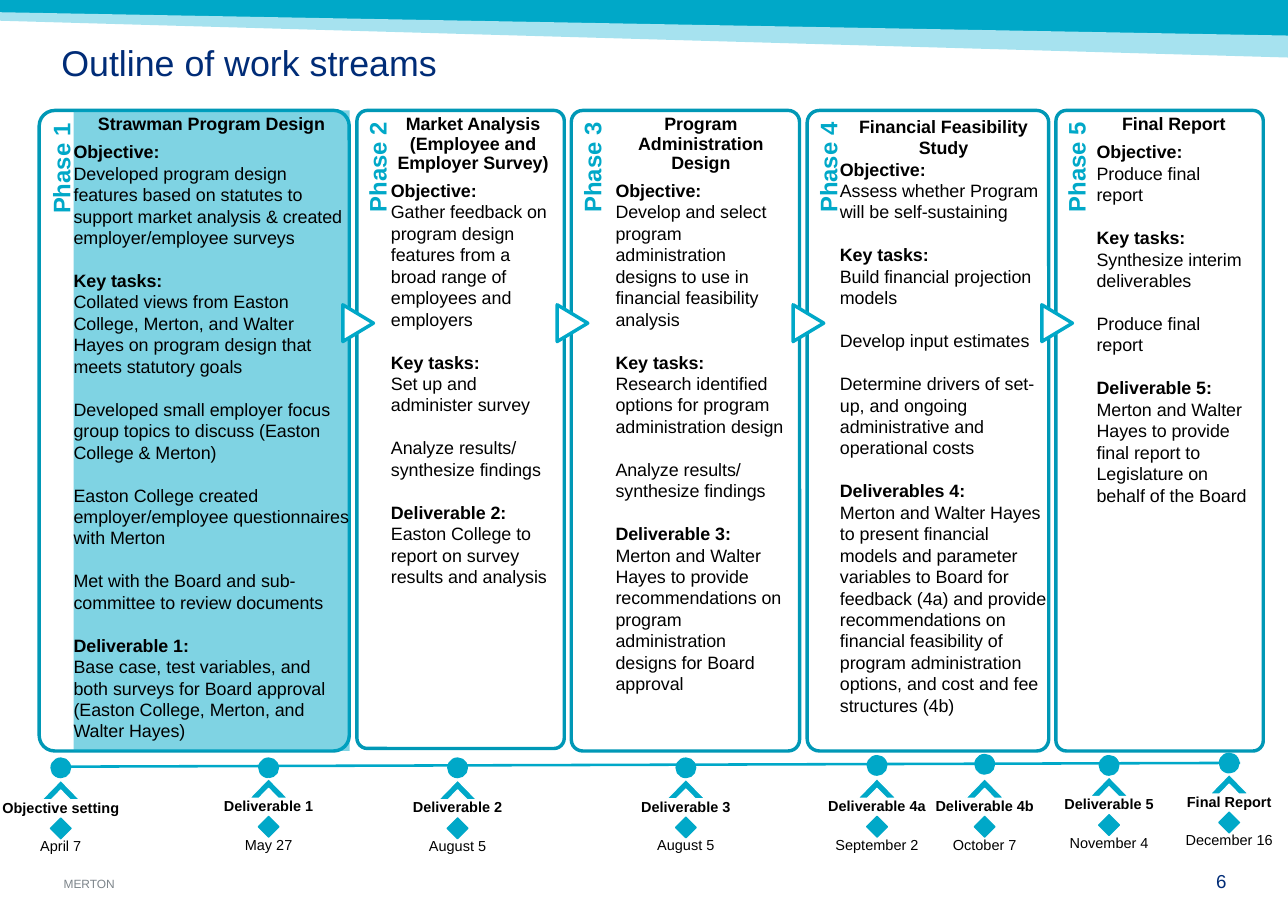
from dataclasses import dataclass

from lxml.etree import SubElement
from pptx import Presentation
from pptx.dml.color import RGBColor as RGB
from pptx.enum.shapes import MSO_CONNECTOR as LINE, MSO_SHAPE as SHAPE
from pptx.enum.text import MSO_ANCHOR as ANCHOR, PP_ALIGN as ALIGN
from pptx.oxml.ns import qn
from pptx.util import Pt

# ---- Content ----
TITLE = "Outline of work streams"
FOOTER, PAGE = "MERTON", "6"

# heading, panel left / width / height, body left / width, sections
PHASES = [
    ("Strawman Program Design", (23, 182, 376), (43.2, 162), [
        ("Objective:", ["Developed program design features based on statutes to support "
                        "market analysis & created employer/employee surveys"]),
        ("Key tasks:", ["Collated views from Easton College, Merton, and Walter Hayes on "
                        "program design that meets statutory goals",
                        "Developed small employer focus group topics to discuss "
                        "(Easton College & Merton)",
                        "Easton College created employer/employee questionnaires with Merton",
                        "Met with the Board and sub-committee to review documents"]),
        ("Deliverable 1:", ["Base case, test variables, and both surveys for Board approval "
                            "(Easton College, Merton, and Walter Hayes)"])]),
    ("Market Analysis (Employee and Employer Survey)", (209.5, 121.7, 374.5), (229.5, 96.5), [
        ("Objective:", ["Gather feedback on program design features from a broad range of "
                        "employees and employers"]),
        ("Key tasks:", ["Set up and administer survey",
                        "Analyze results/ synthesize findings"]),
        ("Deliverable 2:", ["Easton College to report on survey results and analysis"])]),
    ("Program Administration Design", (335.3, 134, 376), (361.3, 100.2), [
        ("Objective:", ["Develop and select program administration designs to use in "
                        "financial feasibility analysis"]),
        ("Key tasks:", ["Research identified options for program administration design",
                        "Analyze results/ synthesize findings"]),
        ("Deliverable 3:", ["Merton and Walter Hayes to provide recommendations on program "
                            "administration designs for Board approval"])]),
    ("Financial Feasibility Study", (473.8, 141.8, 376), (493, 121.7), [
        ("Objective:", ["Assess whether Program will be self-sustaining"]),
        ("Key tasks:", ["Build financial projection models",
                        "Develop input estimates",
                        "Determine drivers of set-up, and ongoing administrative and "
                        "operational costs"]),
        ("Deliverables 4:", ["Merton and Walter Hayes to present financial models and parameter "
                             "variables to Board for feedback (4a) and provide recommendations "
                             "on financial feasibility of program administration options, and "
                             "cost and fee structures (4b)"])]),
    ("Final Report", (619.8, 121.7, 376), (643.7, 90.7), [
        ("Objective:", ["Produce final report"]),
        ("Key tasks:", ["Synthesize interim deliverables", "Produce final report"]),
        ("Deliverable 5:", ["Merton and Walter Hayes to provide final report to Legislature "
                            "on behalf of the Board"])]),
]
LOOSE_HEADING = "Financial Feasibility Study"

# label, date, centre, dot middle, marker top
MILESTONES = [
    ("Objective setting", "April 7", 35.7, 450.7, 458),
    ("Deliverable 1", "May 27", 157.7, 450.7, 457),
    ("Deliverable 2", "August 5", 268.6, 450.7, 457.9),
    ("Deliverable 3", "August 5", 402.6, 450.7, 457.4),
    ("Deliverable 4a", "September 2", 514.8, 449.3, 457),
    ("Deliverable 4b", "October 7", 578, 448.6, 457),
    ("Deliverable 5", "November 4", 651, 449.3, 456),
    ("Final Report", "December 16", 721.5, 447.9, 454.5),
]
CHEVRON = [(-11.2, 11.5), (-5.6, 11.5), (0, 5.8), (5.6, 11.5), (11.2, 11.5), (0, 0)]


@dataclass(frozen=True)
class Theme:
    font: str = "Arial"
    teal: RGB = RGB(0x00, 0xA8, 0xC8)
    edge: RGB = RGB(0x00, 0x98, 0xB6)
    pale: RGB = RGB(0xA6, 0xE2, 0xEF)
    navy: RGB = RGB(0x00, 0x2C, 0x77)
    grey: RGB = RGB(0x7C, 0x84, 0x8A)
    black: RGB = RGB(0, 0, 0)
    white: RGB = RGB(0xFF, 0xFF, 0xFF)
    title: float = 21
    phase: float = 14
    page: float = 11
    body: float = 10.5
    label: float = 8.5
    footer: float = 7


THEME = Theme()
PANEL_TOP = 64.8
ARROW_MIDDLE = 189.7

prs = Presentation()
prs.slide_width, prs.slide_height = Pt(756), Pt(540)
slide = prs.slides.add_slide(prs.slide_layouts[5])
shapes = slide.shapes


# ---- Helpers ----
def apply(target, **values):
    for name, value in values.items():
        setattr(target, name, value)


def box(*lengths):
    return [Pt(length) for length in lengths]


def frame_up(shape, insets=(0, 0, 0, 0), anchor=ANCHOR.TOP, wrap=True):
    left, top, right, bottom = box(*insets)
    apply(shape.text_frame, margin_left=left, margin_top=top, margin_right=right,
          margin_bottom=bottom, vertical_anchor=anchor, word_wrap=wrap)
    return shape.text_frame


def write(paragraph, text, size, color=THEME.black, bold=False, **layout):
    run = paragraph.add_run()
    run.text = text
    apply(run.font, name=THEME.font, size=Pt(size), bold=bold)
    run.font.color.rgb = color
    apply(paragraph, **{"alignment": ALIGN.LEFT, **layout})


def paint(shape, fill, edge=None, weight=0.75):
    shape.shadow.inherit = False
    shape.fill.solid()
    shape.fill.fore_color.rgb = fill
    if edge is None:
        shape.line.fill.background()
    else:
        shape.line.color.rgb = edge
        shape.line.width = Pt(weight)
    return shape


def outline(points):
    start, *rest = [tuple(box(*point)) for point in points]
    builder = shapes.build_freeform(*start)
    builder.add_line_segments(rest, close=True)
    return builder.convert_to_shape()


def centred(preset, x, y, width, height):
    return shapes.add_shape(preset, *box(x - width / 2, y - height / 2, width, height))


def note(place, text, size, color=THEME.black, bold=False, frame=None, **layout):
    text_frame = frame_up(shapes.add_textbox(*box(*place)), **(frame or {}))
    write(text_frame.paragraphs[0], text, size, color, bold, **layout)


# ---- Top bands, title, footer ----
paint(outline([(0, 0), (756, 0), (756, 23), (0, 8.6)]), THEME.teal)
paint(outline([(0, 7.2), (756, 20.9), (756, 33.8), (0, 12.2)]), THEME.pale)

left, top, width, height = box(36, 24.5, 684, 54.7)
apply(shapes.title, left=left, top=top, width=width, height=height)
write(frame_up(shapes.title, (0, 3.6, 7.2, 3.6)).paragraphs[0],
      TITLE, THEME.title, THEME.navy, line_spacing=0.83)
note((37.4, 514.8, 227.5, 7.9), FOOTER, THEME.footer, THEME.grey,
     frame={"anchor": ANCHOR.BOTTOM, "wrap": False})
note((684.7, 510.5, 35.3, 13), PAGE, THEME.page, THEME.navy, alignment=ALIGN.RIGHT)

# ---- Phase panels ----
for number, (heading, panel_place, body_place, sections) in enumerate(PHASES, 1):
    left, width, height = panel_place
    panel = centred(SHAPE.ROUNDED_RECTANGLE, left + width / 2, PANEL_TOP + height / 2,
                    height, width)
    panel.rotation = 270
    panel.adjustments[0] = 0.05
    paint(panel, THEME.white, THEME.edge, 2)
    write(frame_up(panel, (67.7, 3.6, 5, 3.6)).paragraphs[0], f"Phase {number}",
          THEME.phase, THEME.teal, True, alignment=ALIGN.RIGHT, line_spacing=0.9)

    if number > 1:
        arrow = centred(SHAPE.FLOWCHART_EXTRACT, left + 0.7, ARROW_MIDDLE, 21.6, 18)
        arrow.rotation = 90
        paint(arrow, THEME.white, THEME.teal, 2)

    body_left, body_width = body_place
    body = shapes.add_textbox(*box(body_left, PANEL_TOP, body_width, height))
    if number == 1:
        body.fill.solid()
        body.fill.fore_color.rgb = THEME.teal
        tint = body.fill._xPr.find(qn("a:solidFill"))[0]
        SubElement(tint, qn("a:alpha"), val="50000")
    story = frame_up(body, (0, 2.9, 0, 0))
    loose = heading == LOOSE_HEADING
    write(story.paragraphs[0], heading, THEME.body, bold=True, alignment=ALIGN.CENTER,
          line_spacing=1.0 if loose else 0.9, space_after=Pt(0 if loose else 3.7))
    for order, (topic, items) in enumerate(sections):
        write(story.add_paragraph(), topic, THEME.body, bold=True,
              space_before=Pt(12.6 if order else 0))
        for position, item in enumerate(items):
            write(story.add_paragraph(), item, THEME.body,
                  space_before=Pt(12.6 if position else 0))

# ---- Timeline ----
axis = shapes.add_connector(LINE.STRAIGHT, *box(33.8, 450, 727.9, 447.8))
axis.line.color.rgb = THEME.teal
axis.line.width = Pt(1.5)
SubElement(axis._element.spPr, qn("a:effectLst"))

for label, date, x, dot_y, marker_top in MILESTONES:
    paint(centred(SHAPE.OVAL, x, dot_y, 11.5, 11.5), THEME.teal, THEME.teal)
    paint(outline([(x + dx, marker_top + dy) for dx, dy in CHEVRON]), THEME.teal, THEME.white)
    paint(centred(SHAPE.DIAMOND, x, marker_top + 28.3, 12.2, 12.2), THEME.teal, THEME.teal)
    for text, drop, span, bold in ((label, 12.2, 100, True), (date, 35, 76.3, False)):
        note((x - span / 2, marker_top + drop, span, 8.6), text, THEME.label, bold=bold,
             alignment=ALIGN.CENTER, line_spacing=0.86)

prs.save("out.pptx")
